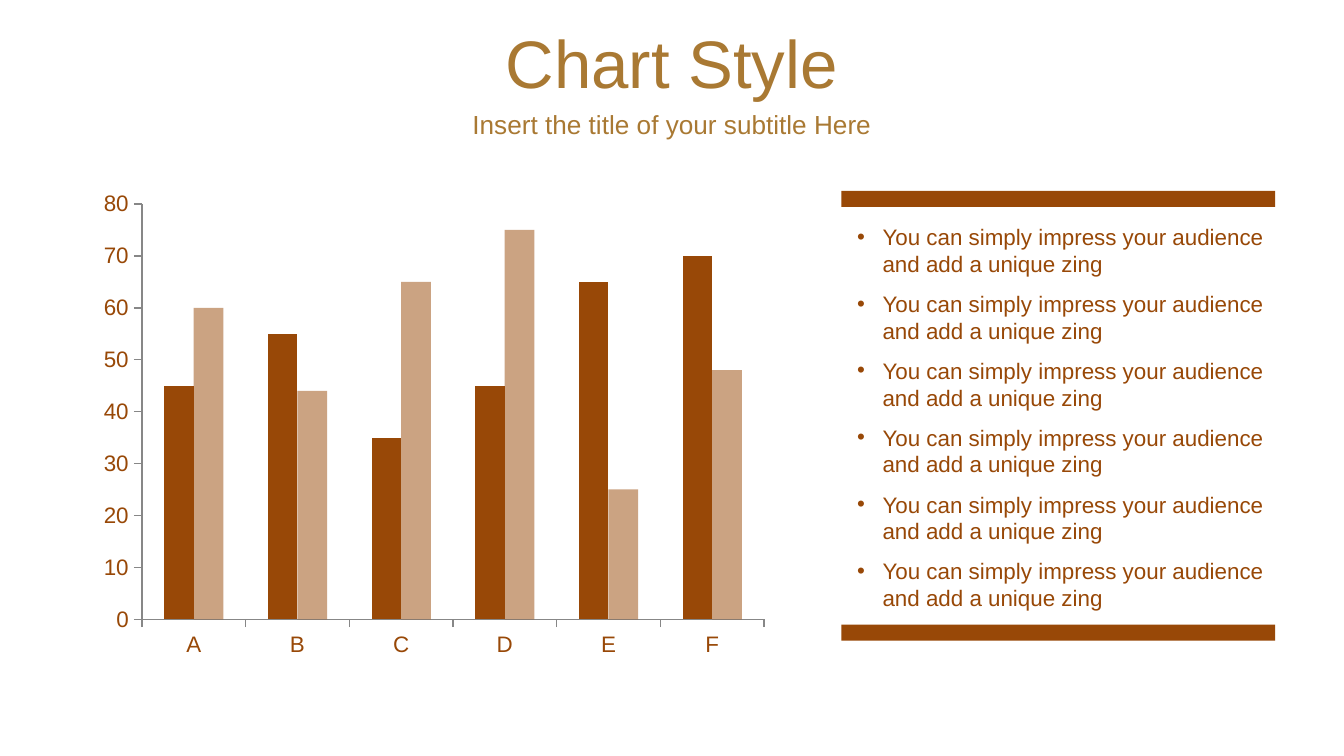
from lxml.etree import SubElement
from pptx import Presentation
from pptx.chart.data import CategoryChartData as ChartData
from pptx.dml.color import RGBColor
from pptx.enum.chart import XL_CHART_TYPE as Kind, XL_TICK_MARK as Tick
from pptx.enum.shapes import MSO_SHAPE as Shape
from pptx.enum.text import MSO_ANCHOR as Anchor, MSO_AUTO_SIZE as Fit, PP_ALIGN as Align
from pptx.oxml.ns import qn
from pptx.util import Cm, Pt

FONT = "Arial"
BROWN, GOLD, GREY = "984807", "A97933", "878787"

# text, top, height (cm), size (pt)
heads = [
    ("Chart Style", 0.36, 1.6, 36),
    ("Insert the title of your subtitle Here", 1.96, 0.78, 14),
]
cats = ["A", "B", "C", "D", "E", "F"]
# name, values, opacity in percent
series = [
    ("Series 1", [45, 55, 35, 45, 65, 70], 100),
    ("Series 2", [60, 44, 65, 75, 25, 48], 50),
]
points = ["You can simply impress your audience and add a unique zing"] * 6

WIDTH, HEIGHT = 25.4, 14.29
BARS = [3.61, 11.81]
LIST_TOP, STEP = 4.09, 1.265
INDENT = 0.48


def rgb(code):
    return RGBColor.from_string(code)


def style(font, size, code):
    font.name, font.size = FONT, Pt(size)
    font.color.rgb = rgb(code)


def add_text(text, left, top, width, height, size, code):
    box = slide.shapes.add_textbox(Cm(left), Cm(top), Cm(width), Cm(height))
    frame = box.text_frame
    frame.word_wrap = True
    frame.text = text
    style(frame.paragraphs[0].runs[0].font, size, code)
    return frame


def add_bullet(para):
    props = para._p.get_or_add_pPr()
    props.set("marL", str(Cm(INDENT)))
    props.set("indent", str(-Cm(INDENT)))
    SubElement(props, qn("a:buFont"), typeface=FONT)
    SubElement(props, qn("a:buChar"), char="•")


def set_alpha(fill, percent):
    color = fill._xPr.find(qn("a:solidFill"))[0]
    SubElement(color, qn("a:alpha"), val=str(percent * 1000))


deck = Presentation()
deck.slide_width, deck.slide_height = Cm(WIDTH), Cm(HEIGHT)
slide = deck.slides.add_slide(deck.slide_layouts[6])

for text, top, height, size in heads:
    frame = add_text(text, 0, top, WIDTH, height, size, GOLD)
    frame.vertical_anchor = Anchor.MIDDLE
    frame.paragraphs[0].alignment = Align.CENTER

data = ChartData()
data.categories = cats
for name, values, _ in series:
    data.add_series(name, values)
chart = slide.shapes.add_chart(
    Kind.COLUMN_CLUSTERED, Cm(1.7), Cm(3.45), Cm(13), Cm(9.14), data).chart
chart.has_legend = chart.has_title = False
style(chart.font, 12, BROWN)

plot = chart.plots[0]
plot.gap_width, plot.overlap = 150, 0
plot.vary_by_categories = False
for item, (_, _, percent) in zip(plot.series, series):
    fill = item.format.fill
    fill.solid()
    fill.fore_color.rgb = rgb(BROWN)
    if percent < 100:
        set_alpha(fill, percent)

for axis in (chart.category_axis, chart.value_axis):
    axis.has_major_gridlines = False
    axis.major_tick_mark, axis.minor_tick_mark = Tick.OUTSIDE, Tick.NONE
    axis.format.line.color.rgb = rgb(GREY)
    style(axis.tick_labels.font, 12, BROWN)
scale = chart.value_axis
scale.minimum_scale, scale.maximum_scale, scale.major_unit = 0, 80, 10

for top in BARS:
    bar = slide.shapes.add_shape(Shape.RECTANGLE, Cm(15.9), Cm(top), Cm(8.2), Cm(0.3))
    bar.shadow.inherit = False
    bar.fill.solid()
    bar.fill.fore_color.rgb = rgb(BROWN)
    bar.line.fill.background()

for row, text in enumerate(points):
    frame = add_text(text, 15.95, LIST_TOP + row * STEP, 8.76, 1.28, 12, BROWN)
    frame.auto_size = Fit.SHAPE_TO_FIT_TEXT
    add_bullet(frame.paragraphs[0])

deck.save("out.pptx")
